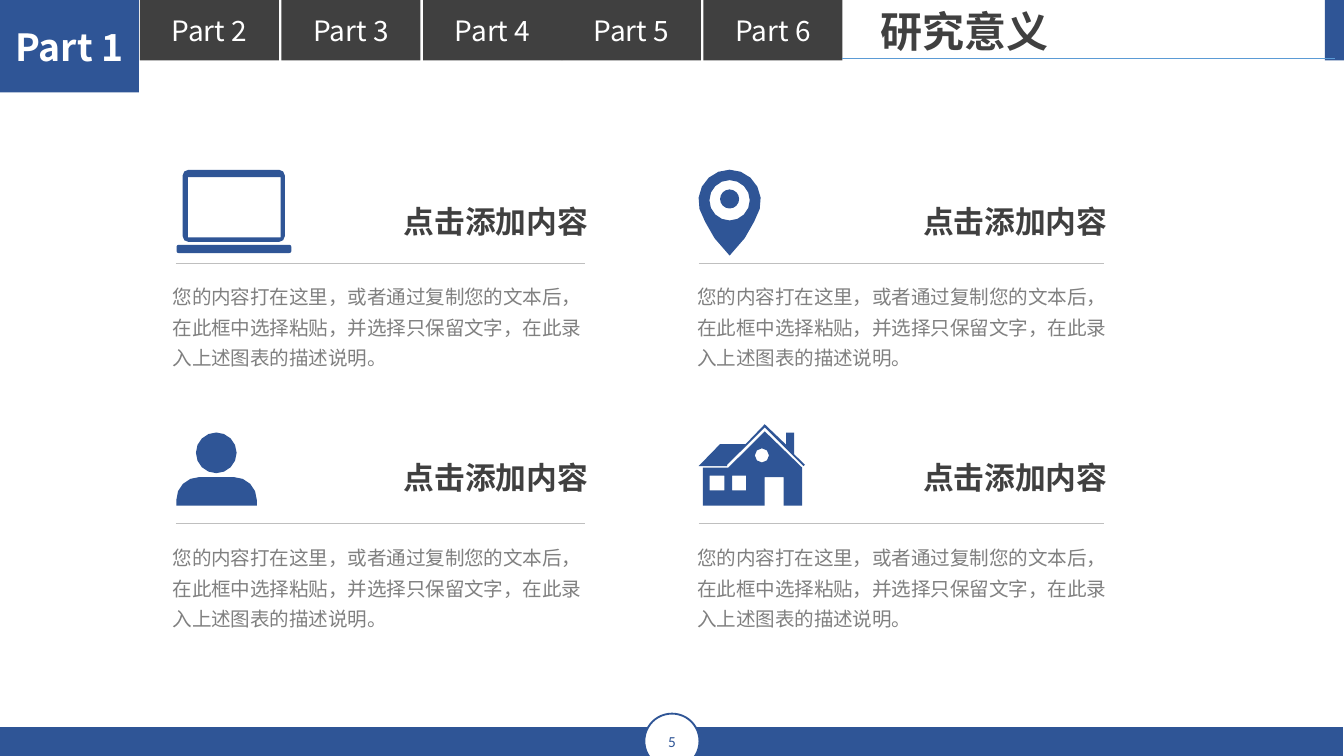
import math
import pptx
import pptx.dml.color
import pptx.enum.shapes
import pptx.enum.text
import pptx.oxml.ns
import pptx.util
from lxml import etree

Pt = pptx.util.Pt
SHAPES = pptx.enum.shapes.MSO_SHAPE
ALIGN = pptx.enum.text.PP_ALIGN
ANCHOR = pptx.enum.text.MSO_ANCHOR
FIT = pptx.enum.text.MSO_AUTO_SIZE.SHAPE_TO_FIT_TEXT

FONT = "Noto Sans CJK SC"
BLUE, DARK, WHITE = "2F5596", "404040", "FFFFFF"
TABS = [("Part 2", 75), ("Part 3", 150.8), ("Part 4", 226.7), ("Part 5", 301), ("Part 6", 376.9)]
TITLE = "研究意义"
HEADING = "点击添加内容"
BODY = "您的内容打在这里，或者通过复制您的文本后，在此框中选择粘贴，并选择只保留文字，在此录入上述图表的描述说明。"
COLUMNS = [
    {"rule": (94.3, 313.6), "heading": 208.8, "body": 87.1},
    {"rule": (374.4, 591.5), "heading": 487, "body": 368.2},
]
ROWS = [
    {"rule": 141.1, "heading": 105.8, "body": 146.3},
    {"rule": 280.3, "heading": 243.2, "body": 286.1},
]


def arc(x, y, radius, start, end):
    steps = math.ceil((end - start) / (22.5 if radius > 4 else 45))
    angles = [math.radians(start + (end - start) * step / steps) for step in range(steps + 1)]
    return [(x + radius * math.cos(a), y + radius * math.sin(a)) for a in angles]


def circle(x, y, radius):
    return arc(x, y, radius, 0, 360)[:-1]


def block(left, top, right, bottom, top_radius=0, bottom_radius=0):
    corners = [
        (left, top, 1, 1, top_radius, 180),
        (right, top, -1, 1, top_radius, 270),
        (right, bottom, -1, -1, bottom_radius, 0),
        (left, bottom, 1, -1, bottom_radius, 90),
    ]
    points = []
    for x, y, inward_x, inward_y, radius, start in corners:
        if radius:
            points += arc(x + inward_x * radius, y + inward_y * radius, radius, start, start + 90)
        else:
            points.append((x, y))
    return points


ICONS = [
    [
        [(409.7, 231.1), (390.2, 250.6), (376.6, 250.6), (376.6, 270.9), (409.7, 270.9),
         (409.7, 255.6), (419.8, 255.6), (419.8, 270.9), (429.8, 270.9), (429.8, 250.6)],
        block(380.2, 254.9, 388.1, 262.8),
        block(392.2, 254.9, 399.8, 262.8),
        circle(408.2, 244, 3.8),
        [(431.2, 249), (430.5, 249.7), (409.7, 229), (389.5, 249.1), (389.5, 249.7),
         (374.3, 249.7), (385.7, 238), (399.4, 238), (409.7, 227.3), (421.2, 238.3),
         (421.2, 231.8), (425.5, 231.8), (425.5, 243.4)],
    ],
    [
        block(94.6, 131.2, 156.1, 135.6, 1, 1),
        block(97.9, 91, 152.6, 129.6, 3, 3),
        block(100.7, 94.9, 150.4, 127.2),
    ],
    [
        circle(115.9, 242.6, 10.9),
        block(94.5, 255.6, 137.6, 270.9, 12.2),
    ],
    [
        arc(390.9, 107.6, 16.7, 165, 375)
        + [(404, 118.8), (399, 127.6), (390.9, 136.9), (382.8, 127.6), (377.8, 118.8)],
        circle(390.9, 107.3, 10.8),
        circle(390.9, 106.6, 5.1),
    ],
]


def color(value):
    return pptx.dml.color.RGBColor.from_string(value)


def paint(shape, fill, line=None):
    shape.shadow.inherit = False
    shape.fill.solid()
    shape.fill.fore_color.rgb = color(fill)
    if line:
        shape.line.color.rgb = color(line)
        shape.line.width = Pt(1)
    else:
        shape.line.fill.background()


def write(box, text, size, tint, bold=False, align=ALIGN.LEFT, font=FONT, spacing=None):
    para = box.text_frame.paragraphs[0]
    para.alignment = align
    if spacing:
        para.line_spacing = spacing
    span = para.add_run()
    span.text = text
    span.font.size = Pt(size)
    span.font.bold = bold
    span.font.color.rgb = color(tint)
    span.font.name = font
    east_asian = etree.SubElement(span.font._element, pptx.oxml.ns.qn("a:ea"))
    east_asian.set("typeface", FONT)


def add_shape(page, kind, left, top, width, height, fill, line=None):
    shape = page.shapes.add_shape(kind, Pt(left), Pt(top), Pt(width), Pt(height))
    paint(shape, fill, line)
    frame = shape.text_frame
    frame.margin_left = frame.margin_right = frame.margin_top = frame.margin_bottom = 0
    frame.vertical_anchor = ANCHOR.MIDDLE
    return shape


def add_text(page, left, top, width, height, wrap=False, anchor=ANCHOR.TOP):
    box = page.shapes.add_textbox(Pt(left), Pt(top), Pt(width), Pt(height))
    frame = box.text_frame
    frame.word_wrap = wrap
    frame.auto_size = FIT
    frame.vertical_anchor = anchor
    frame.margin_left = frame.margin_right = Pt(5.4)
    frame.margin_top = frame.margin_bottom = Pt(2.7)
    return box


def add_line(page, start, end, y, tint):
    line = page.shapes.add_connector(
        pptx.enum.shapes.MSO_CONNECTOR.STRAIGHT, Pt(start), Pt(y), Pt(end), Pt(y))
    line.line.color.rgb = color(tint)
    line.line.width = Pt(0.5)
    etree.SubElement(line._element.spPr, pptx.oxml.ns.qn("a:effectLst"))


def add_icon(page, contours):
    units = [[(round(x * 100), round(y * 100)) for x, y in contour] for contour in contours]
    builder = page.shapes.build_freeform(*units[0][0], scale=Pt(1) / 100)
    for index, contour in enumerate(units):
        if index:
            builder.move_to(*contour[0])
        builder.add_line_segments(contour[1:], close=True)
    paint(builder.convert_to_shape(), BLUE)


def main():
    deck = pptx.Presentation()
    deck.slide_width, deck.slide_height = Pt(720), Pt(405)
    page = deck.slides.add_slide(deck.slide_layouts[6])

    current = add_shape(page, SHAPES.RECTANGLE, 0, 0, 74.5, 49.5, BLUE)
    write(current, "Part 1", 20, WHITE, True, ALIGN.CENTER)
    for label, left in TABS:
        tab = add_shape(page, SHAPES.RECTANGLE, left, 0, 74.5, 32.4, DARK)
        write(tab, label, 15, WHITE, align=ALIGN.CENTER)
    add_shape(page, SHAPES.RECTANGLE, 709.8, 0, 10.2, 32.4, BLUE)
    add_shape(page, SHAPES.RECTANGLE, 0, 389.5, 719.5, 15.5, BLUE)
    badge = add_shape(page, SHAPES.OVAL, 345.2, 382.3, 29.5, 29.5, WHITE, BLUE)
    write(badge, "5", 8.2, BLUE, align=ALIGN.CENTER, font="Calibri")
    add_line(page, 715, 451.3, 31.4, "5B9BD5")
    title = add_text(page, 466.3, 0, 102, 32.3)
    write(title, TITLE, 22.5, DARK, True, font="Arial")

    for contours in ICONS:
        add_icon(page, contours)
    for row in ROWS:
        for column in COLUMNS:
            add_line(page, *column["rule"], row["rule"], "BFBFBF")
            heading = add_text(page, column["heading"], row["heading"], 111.6, 25.2, anchor=ANCHOR.MIDDLE)
            write(heading, HEADING, 16.5, DARK, True, ALIGN.RIGHT)
            body = add_text(page, column["body"], row["body"], 239.8, 55.4, wrap=True)
            write(body, BODY, 10.5, "808080", spacing=1.3)

    deck.save("out.pptx")


if __name__ == "__main__":
    main()
